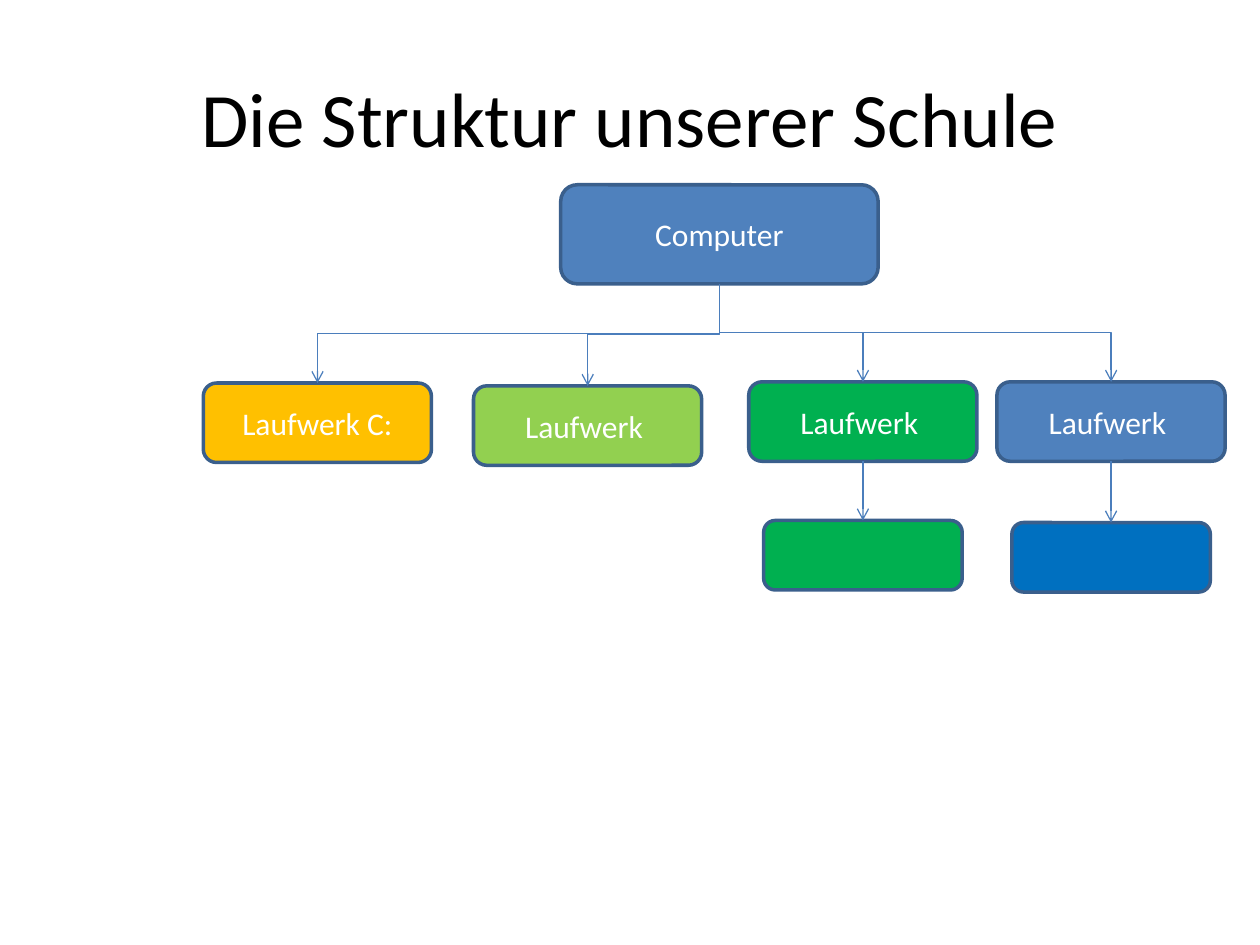
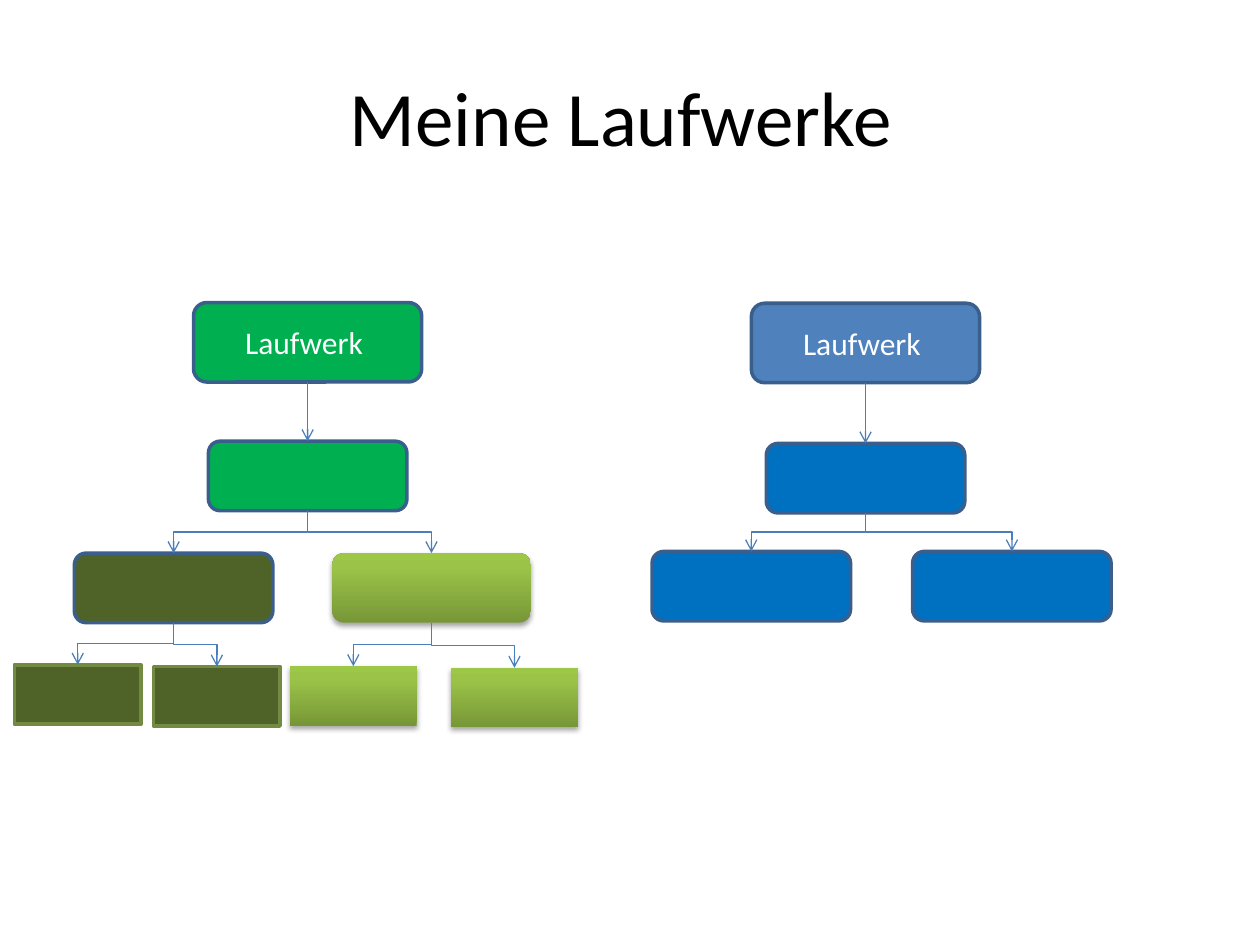
from lxml.etree import SubElement
from pptx import Presentation
from pptx.dml.color import RGBColor
from pptx.enum.shapes import MSO_CONNECTOR, MSO_SHAPE
from pptx.enum.text import MSO_ANCHOR, PP_ALIGN
from pptx.oxml import parse_xml
from pptx.oxml.ns import nsdecls, qn
from pptx.util import Pt

FONT = "Calibri"
EDGE, WIRE = "3A5F8C", "4B7EBC"
STOPS = [(0, "779737"), (80, "9BC348"), (100, "9DC746")]

# level: shape, width, height
SIZES = {
    "root": (MSO_SHAPE.ROUNDED_RECTANGLE, 181.4, 56.6),
    "drive": (MSO_SHAPE.ROUNDED_RECTANGLE, 130.4, 45.4),
    "folder": (MSO_SHAPE.ROUNDED_RECTANGLE, 113.4, 39.7),
    "file": (MSO_SHAPE.RECTANGLE, 72.4, 34),
}

# look: fill (None for the gradient), line
LOOKS = {
    "steel": ("4F81BD", EDGE),
    "gold": ("FFC000", EDGE),
    "lime": ("92D050", EDGE),
    "green": ("00B050", EDGE),
    "blue": ("0070C0", EDGE),
    "olive": ("4F6228", EDGE),
    "moss": ("4F6228", "738A42"),
    "glossy": (None, None),
}

# node: key, parent, level, look, middle x, top, text
SLIDES = [
    ("Die Struktur unserer Schule", (36, 21.6), [
        ("pc", None, "root", "steel", 411.1, 105.6, "Computer"),
        ("c", "pc", "drive", "gold", 181.4, 218.9, "Laufwerk C:"),
        ("d", "pc", "drive", "lime", 335.8, 220.5, "Laufwerk "),
        ("e", "pc", "drive", "green", 493.1, 218.2, "Laufwerk "),
        ("f", "pc", "drive", "steel", 634.9, 218.2, "Laufwerk "),
        ("e1", "e", "folder", "green", 493.1, 297.4, ""),
        ("f1", "f", "folder", "blue", 634.9, 298.6, ""),
    ]),
    ("Meine Laufwerke", (30.9, 20.9), [
        ("e", None, "drive", "green", 175.8, 172.9, "Laufwerk "),
        ("f", None, "drive", "steel", 494.6, 173.3, "Laufwerk "),
        ("e1", "e", "folder", "green", 175.8, 252.1, ""),
        ("f1", "f", "folder", "blue", 494.6, 253.4, ""),
        ("e2", "e1", "folder", "olive", 99.2, 316.1, ""),
        ("e3", "e1", "folder", "glossy", 246.6, 316.1, ""),
        ("f2", "f1", "folder", "blue", 429.3, 315.1, ""),
        ("f3", "f1", "folder", "blue", 578.2, 315.1, ""),
        ("e4", "e2", "file", "moss", 44.4, 379.9, ""),
        ("e5", "e2", "file", "moss", 123.9, 380.9, ""),
        ("e6", "e3", "file", "glossy", 201.9, 380.7, ""),
        ("e7", "e3", "file", "glossy", 294, 381.6, ""),
    ]),
]


def color(code):
    return RGBColor.from_string(code)


def write(shape, text, size, code):
    frame = shape.text_frame
    frame.word_wrap = True
    frame.vertical_anchor = MSO_ANCHOR.MIDDLE
    frame.text = text
    para = frame.paragraphs[0]
    para.alignment = PP_ALIGN.CENTER
    for run in para.runs:
        run.font.name, run.font.size = FONT, Pt(size)
        run.font.color.rgb = color(code)


def gloss(shape):
    """Give a shape the green gradient and a soft shadow below."""
    shape.line.fill.background()
    props = shape._element.spPr
    stops = "".join(
        f'<a:gs pos="{pos * 1000}"><a:srgbClr val="{code}"/></a:gs>'
        for pos, code in STOPS)
    grad = parse_xml(
        f'<a:gradFill {nsdecls("a")} rotWithShape="1"><a:gsLst>{stops}</a:gsLst>'
        '<a:lin ang="16200000" scaled="0"/></a:gradFill>')
    props.find(qn("a:prstGeom")).addnext(grad)
    glow = SubElement(
        props.find(qn("a:effectLst")), qn("a:outerShdw"), blurRad=str(Pt(3.1)),
        dist=str(Pt(1.8)), dir="5400000", rotWithShape="0")
    tint = SubElement(glow, qn("a:srgbClr"), val="000000")
    SubElement(tint, qn("a:alpha"), val="35000")


def add_node(slide, level, look, mid, top, text):
    kind, width, height = SIZES[level]
    fill, edge = LOOKS[look]
    node = slide.shapes.add_shape(
        kind, Pt(mid - width / 2), Pt(top), Pt(width), Pt(height))
    node.shadow.inherit = False
    if fill:
        node.fill.solid()
        node.fill.fore_color.rgb = color(fill)
        node.line.color.rgb = color(edge)
        node.line.width = Pt(2)
    else:
        gloss(node)
    if text:
        write(node, text, 18, "FFFFFF")
    return node


def bend(wire, start, end):
    """Turn an elbow so that it leaves and arrives vertically."""
    (x1, y1), (x2, y2) = start, end
    width, height = y2 - y1, abs(x2 - x1)
    wire.left = (x1 + x2 - width) // 2
    wire.top = (y1 + y2 - height) // 2
    wire.width, wire.height = width, height
    right = x2 > x1
    frame = wire._element.spPr.find(qn("a:xfrm"))
    frame.set("rot", "16200000" if right else "5400000")
    frame.set("flipH", "1" if right else "0")


def link(slide, upper, lower):
    start = upper.left + upper.width // 2, upper.top + upper.height
    end = lower.left + lower.width // 2, lower.top
    bent = abs(end[0] - start[0]) > Pt(1)
    kind = MSO_CONNECTOR.ELBOW if bent else MSO_CONNECTOR.STRAIGHT
    wire = slide.shapes.add_connector(kind, *start, *end)
    wire.begin_connect(upper, 2)
    wire.end_connect(lower, 0)
    if bent:
        bend(wire, start, end)
    wire.line.color.rgb = color(WIRE)
    wire.line.width = Pt(0.75)
    SubElement(wire.line._get_or_add_ln(), qn("a:tailEnd"), type="arrow")
    SubElement(wire._element.spPr, qn("a:effectLst"))


def build(deck, title, place, nodes):
    slide = deck.slides.add_slide(deck.slide_layouts[6])
    left, top = place
    head = slide.shapes.add_textbox(Pt(left), Pt(top), Pt(648), Pt(90))
    write(head, title, 44, "000000")
    made = {}
    for key, parent, *rest in nodes:
        made[key] = add_node(slide, *rest)
        if parent:
            link(slide, made[parent], made[key])


def main():
    deck = Presentation()
    deck.slide_width, deck.slide_height = Pt(720), Pt(540)
    for title, place, nodes in SLIDES:
        build(deck, title, place, nodes)
    deck.save("out.pptx")


if __name__ == "__main__":
    main()
